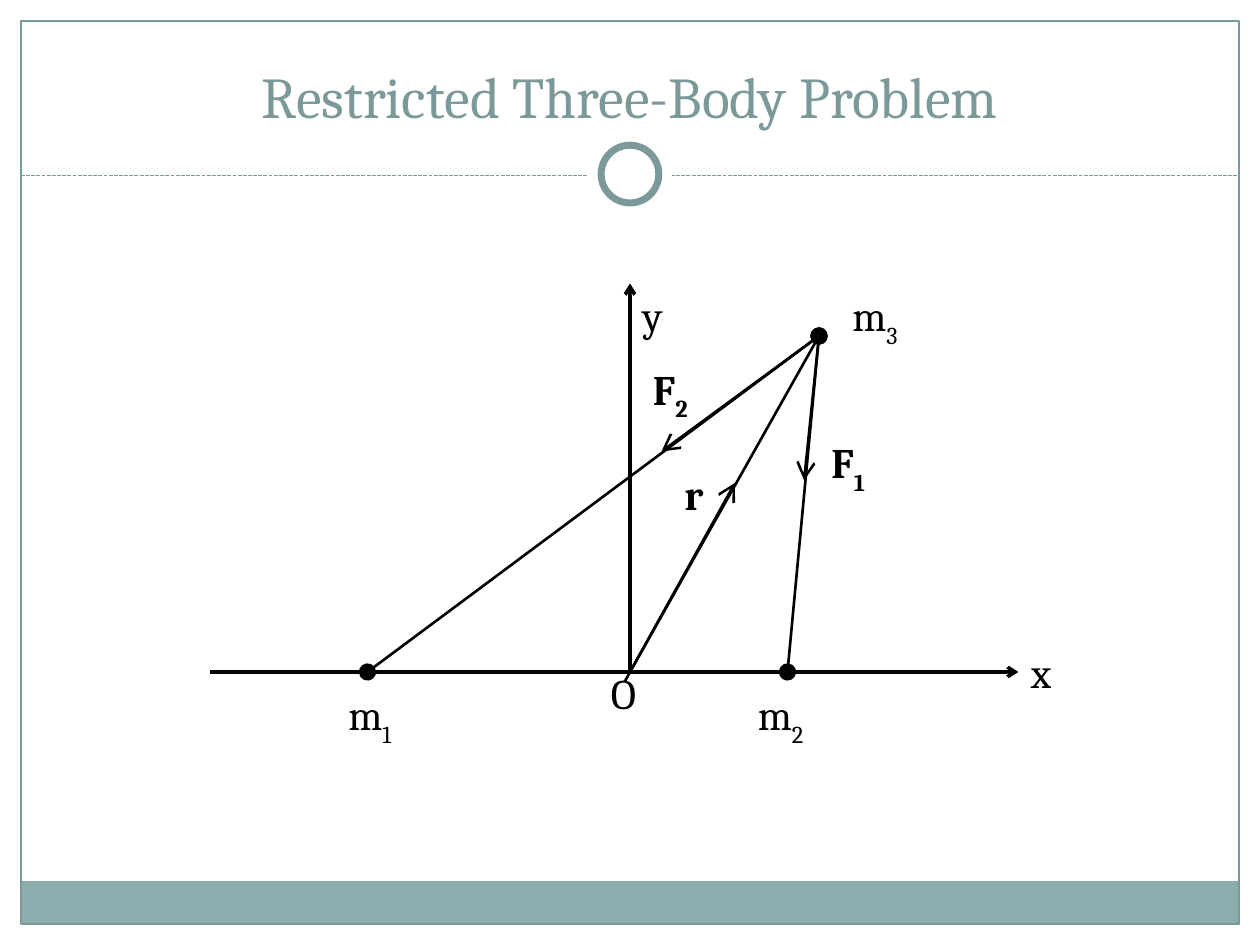
import pptx
import pptx.dml.color
import pptx.enum.dml
import pptx.enum.shapes
import pptx.enum.text
import pptx.oxml
import pptx.oxml.ns
import pptx.util

Pt = pptx.util.Pt
Shape = pptx.enum.shapes.MSO_SHAPE
Anchor = pptx.enum.text.MSO_ANCHOR
Align = pptx.enum.text.PP_ALIGN
SYSTEM_DASH = pptx.enum.dml.MSO_LINE.SQUARE_DOT

BLACK = pptx.dml.color.RGBColor(0x00, 0x00, 0x00)
WHITE = pptx.dml.color.RGBColor(0xFF, 0xFF, 0xFF)
TEAL = pptx.dml.color.RGBColor(0x7C, 0x99, 0x9A)
PALE_TEAL = pptx.dml.color.RGBColor(0x8C, 0xAD, 0xAE)


class Diagram:
    font = "Cambria"
    label_size = 24
    label_width, label_height = 138, 48

    def __init__(self, page):
        self.page = page

    def shape(self, kind, left, top, width, height, fill=None, line=None, weight=0.75):
        shape = self.page.shapes.add_shape(kind, Pt(left), Pt(top), Pt(width), Pt(height))
        shape.shadow.inherit = False
        if fill is None:
            shape.fill.background()
        else:
            shape.fill.solid()
            shape.fill.fore_color.rgb = fill
        if line is None:
            shape.line.fill.background()
        else:
            shape.line.color.rgb = line
            shape.line.width = Pt(weight)
        return shape

    def line(self, start, end, weight=1.5, color=BLACK, head=None, tail=None, size="lg", dash=None):
        line = self.page.shapes.add_connector(
            pptx.enum.shapes.MSO_CONNECTOR.STRAIGHT, *map(Pt, start + end))
        line.line.color.rgb = color
        line.line.width = Pt(weight)
        if dash is not None:
            line.line.dash_style = dash
        outline = line.line._get_or_add_ln()
        for tag, kind in (("a:headEnd", head), ("a:tailEnd", tail)):
            if kind:
                marker = pptx.oxml.parse_xml(f"<{tag} {pptx.oxml.ns.nsdecls('a')}/>")
                marker.set("type", kind)
                marker.set("w", size)
                marker.set("len", size)
                outline.append(marker)
        line._element.spPr.append(
            pptx.oxml.parse_xml(f"<a:effectLst {pptx.oxml.ns.nsdecls('a')}/>"))

    def text(self, box, text, size, color, subscript="", bold=False,
             anchor=Anchor.TOP, align=Align.LEFT):
        frame = box.text_frame
        frame.word_wrap = True
        frame.vertical_anchor = anchor
        para = frame.paragraphs[0]
        para.alignment = align
        para.font.name = self.font
        para.font.size = Pt(size)
        para.font.bold = bold
        para.font.color.rgb = color
        para.add_run().text = text
        if subscript:
            span = para.add_run()
            span.text = subscript
            span.font._element.set("baseline", "-30000")

    def text_box(self, left, top, width, height):
        return self.page.shapes.add_textbox(Pt(left), Pt(top), Pt(width), Pt(height))

    def title(self, text):
        self.text(self.text_box(24, 18, 672, 60), text, 33, TEAL,
                  anchor=Anchor.BOTTOM, align=Align.CENTER)

    def label(self, left, top, text, subscript="", bold=False, filled=False):
        bounds = left, top, self.label_width, self.label_height
        box = self.shape(Shape.RECTANGLE, *bounds, fill=WHITE) if filled else self.text_box(*bounds)
        self.text(box, text, self.label_size, BLACK, subscript, bold)


def main():
    deck = pptx.Presentation()
    deck.slide_width, deck.slide_height = Pt(720), Pt(540)
    page = deck.slides.add_slide(deck.slide_layouts[6])
    diagram = Diagram(page)

    diagram.shape(Shape.RECTANGLE, 12, 503.5, 696, 24.5, fill=PALE_TEAL)
    diagram.shape(Shape.RECTANGLE, 12, 12, 696, 516, line=TEAL)
    diagram.line((12, 100.5), (708, 100.5), 0.75, TEAL, dash=SYSTEM_DASH)
    diagram.shape(Shape.OVAL, 336, 75.5, 48, 48, fill=WHITE)
    diagram.shape(Shape.OVAL, 343.5, 83, 33, 33, fill=WHITE, line=TEAL, weight=4)
    diagram.title("Restricted Three-Body Problem")

    origin, mass_1, mass_2, mass_3 = (360, 384), (210, 384), (450, 384), (468, 192)
    diagram.line((120, 384), (582, 384), 2, tail="arrow", size="med")
    diagram.line(origin, (360, 162), 2, tail="arrow", size="med")
    for mass in (mass_1, mass_2):
        diagram.line(mass, mass_3, head="oval", tail="oval")
    diagram.line(origin, mass_3, tail="oval")

    diagram.label(426, 390, "m", "2", filled=True)
    diagram.label(192, 390, "m", "1", filled=True)
    diagram.label(480, 162, "m", "3", filled=True)
    diagram.label(468, 246, "F", "1", bold=True, filled=True)
    diagram.label(366, 204, "F", "2", bold=True)
    diagram.label(384, 264, "r", bold=True)
    diagram.label(342, 378, "O")
    diagram.label(582, 366, "x")
    diagram.label(360, 162, "y")

    vectors = ((mass_3, (378, 258)), (mass_3, (459.5, 274.5)), ((357, 389.5), (420, 276)))
    for start, end in vectors:
        diagram.line(start, end, tail="arrow")

    deck.save("out.pptx")


if __name__ == "__main__":
    main()
